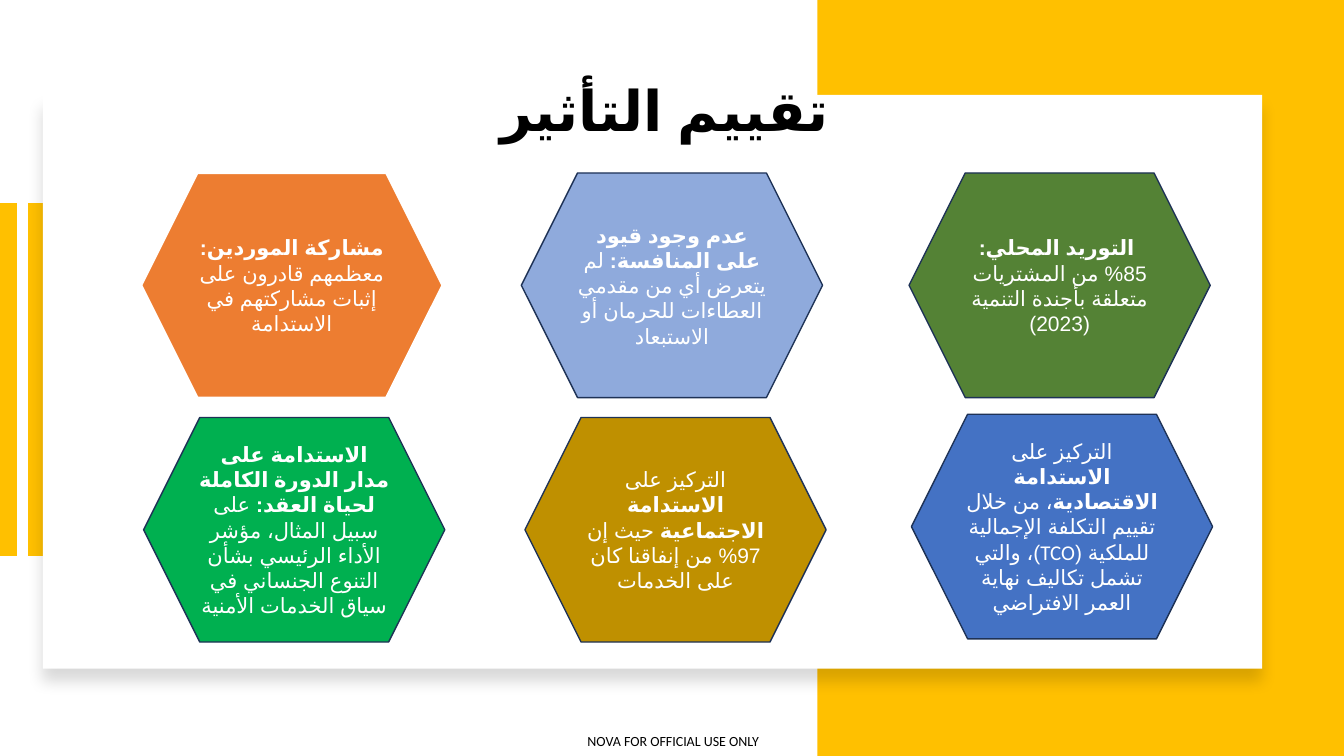
from lxml import etree
from pptx import Presentation
from pptx import util as u
from pptx.dml.color import RGBColor
from pptx.enum import lang, shapes, text
from pptx.oxml.ns import qn

COLORS = {
    "white": "FFFFFF", "black": "000000", "gold": "FFC000", "navy": "1E3256",
    "orange": "ED7D31", "sky": "8FAADC", "olive": "548235",
    "green": "00B050", "bronze": "BF9000", "blue": "4472C4",
}
FONT, ARABIC_FONT = "Calibri", "Arial"
HEX_W, HEX_H = 7.59, 5.66

# Left and top in cm, fill, then (text, bold) runs
HEXAGONS = [
    (3.56, 4.36, "orange", [
        ("مشاركة الموردين:", True),
        (" معظمهم قادرون على إثبات مشاركتهم في الاستدامة", False)]),
    (13.14, 4.36, "sky", [
        ("عدم وجود قيود على المنافسة: ", True),
        ("لم يتعرض أي من مقدمي العطاءات للحرمان أو الاستبعاد", False)]),
    (22.91, 4.36, "olive", [
        (" التوريد المحلي:", True),
        (" 85% من المشتريات متعلقة بأجندة التنمية (2023)", False)]),
    (3.62, 10.52, "green", [
        ("الاستدامة على مدار الدورة الكاملة لحياة العقد:", True),
        (" على سبيل المثال، مؤشر الأداء الرئيسي بشأن التنوع الجنساني "
         "في سياق الخدمات الأمنية", False)]),
    (13.23, 10.52, "bronze", [
        ("التركيز على ", False),
        ("الاستدامة الاجتماعية", True),
        (" حيث إن 97% من إنفاقنا كان على الخدمات", False)]),
    (22.97, 10.44, "blue", [
        ("التركيز على ", False),
        ("الاستدامة الاقتصادية", True),
        ("، من خلال تقييم التكلفة الإجمالية للملكية (TCO)، والتي تشمل "
         "تكاليف نهاية العمر الافتراضي", False)]),
]


def rgb(name):
    return RGBColor.from_string(COLORS[name])


def box(left, top, width, height):
    return [u.Cm(v) for v in (left, top, width, height)]


def write(tf, runs, size=15, color="white", spacing=None):
    """Fill a text frame with one centred right-to-left paragraph."""
    tf.word_wrap = True
    tf.vertical_anchor = text.MSO_ANCHOR.MIDDLE
    p = tf.paragraphs[0]
    p.alignment = text.PP_ALIGN.CENTER
    p.line_spacing = spacing
    p._p.get_or_add_pPr().set("rtl", "1")
    for content, bold in runs:
        r = p.add_run()
        r.text = content
        r.font.name = FONT
        r.font.size = u.Pt(size)
        r.font.bold = bold
        r.font.color.rgb = rgb(color)
        r.font.language_id = lang.MSO_LANGUAGE_ID.ARABIC
        etree.SubElement(r._r.rPr, qn("a:cs"), typeface=ARABIC_FONT)


def add_shape(s, kind, place, fill, line=None, weight=1):
    sp = s.shapes.add_shape(kind, *box(*place))
    sp.shadow.inherit = False
    sp.fill.solid()
    sp.fill.fore_color.rgb = rgb(fill)
    if line:
        sp.line.color.rgb = rgb(line)
        sp.line.width = u.Pt(weight)
    else:
        sp.line.fill.background()
    return sp


def add_rect(s, place, fill):
    return add_shape(s, shapes.MSO_SHAPE.RECTANGLE, place, fill)


def add_hexagon(s, left, top, fill, runs):
    line, weight = ("white", 1.5) if fill == "orange" else ("navy", 1)
    sp = add_shape(s, shapes.MSO_SHAPE.HEXAGON, (left, top, HEX_W, HEX_H),
                   fill, line, weight)
    write(sp.text_frame, runs)


def add_text(s, place, content, bold=False, inset=None, **fmt):
    tf = s.shapes.add_textbox(*box(*place)).text_frame
    if inset is not None:
        tf.margin_left = tf.margin_right = u.Cm(inset)
        tf.margin_top = tf.margin_bottom = u.Cm(inset)
    write(tf, [(content, bold)], **fmt)


def drop_shadow(sp, blur, dist, opacity):
    """Cast a soft black shadow straight down."""
    effects = sp._element.spPr.find(qn("a:effectLst"))
    shadow = etree.SubElement(
        effects, qn("a:outerShdw"), blurRad=str(u.Pt(blur)),
        dist=str(u.Pt(dist)), dir="5400000", algn="t", rotWithShape="0")
    color = etree.SubElement(shadow, qn("a:srgbClr"), val=COLORS["black"])
    etree.SubElement(color, qn("a:alpha"), val=str(opacity * 1000))


def main():
    prs = Presentation()
    prs.slide_width, prs.slide_height = u.Cm(33.87), u.Cm(19.05)
    s = prs.slides.add_slide(prs.slide_layouts[6])

    # Footer
    add_text(s, (14.36, 18.31, 5.21, 0.74), "NOVA FOR OFFICIAL USE ONLY",
             inset=0, size=10, color="black")

    # Gold bands and the white card
    for left in (0, 0.71):
        add_rect(s, (left, 5.12, 0.43, 8.89), "gold")
    add_rect(s, (20.6, 0, 13.27, 19.05), "gold")
    card = add_rect(s, (1.08, 2.39, 30.73, 14.46), "white")
    drop_shadow(card, blur=11, dist=10, opacity=15)

    # Hexagons
    for hexagon in HEXAGONS:
        add_hexagon(s, *hexagon)

    # Title
    add_text(s, (2.34, 1.02, 29.21, 3.68), " تقييم التأثير", bold=True,
             size=40, color="black", spacing=0.9)

    prs.save("out.pptx")


if __name__ == "__main__":
    main()
